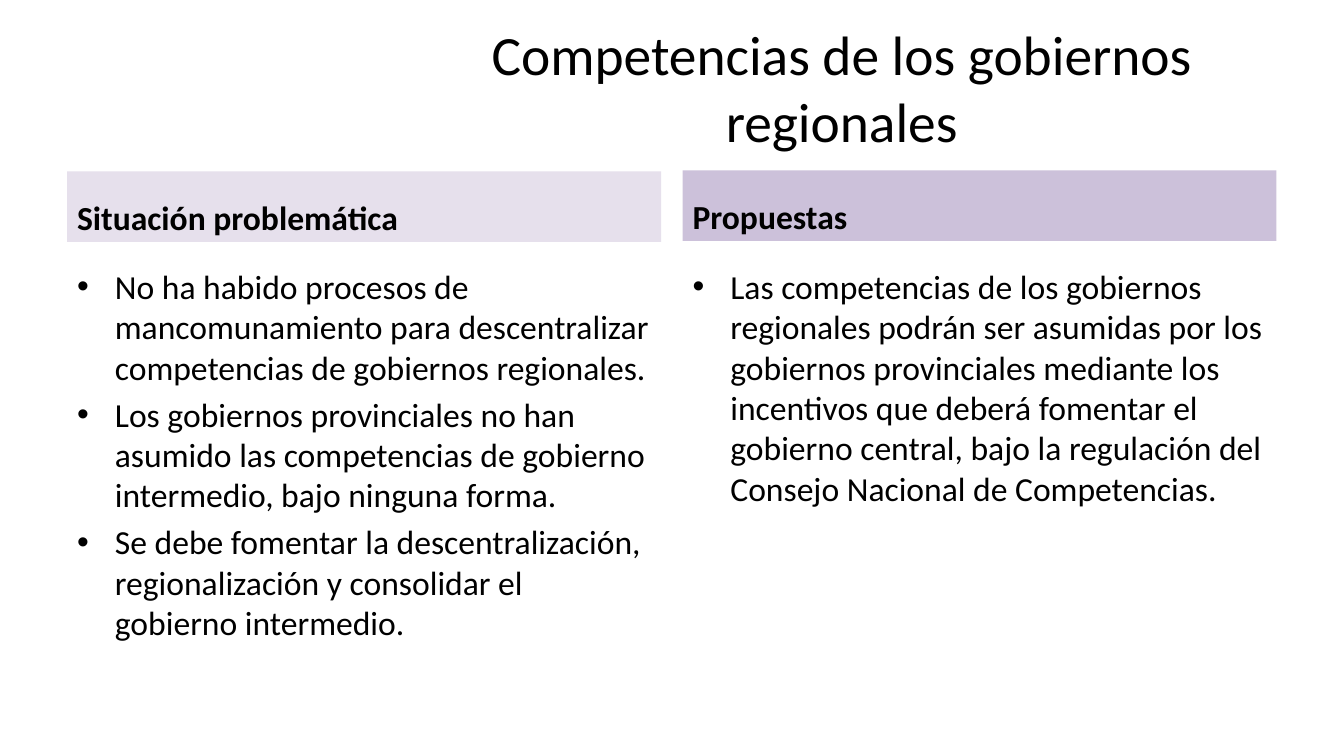
from lxml import etree
from pptx import Presentation
from pptx.dml.color import RGBColor
from pptx.enum.shapes import MSO_SHAPE
from pptx.enum.text import MSO_ANCHOR, MSO_AUTO_SIZE, PP_ALIGN
from pptx.oxml.ns import qn
from pptx.util import Pt

RECTANGLE = MSO_SHAPE.RECTANGLE
TOP, MIDDLE, BOTTOM = MSO_ANCHOR.TOP, MSO_ANCHOR.MIDDLE, MSO_ANCHOR.BOTTOM
NO_AUTOFIT = MSO_AUTO_SIZE.NONE
LEFT, CENTER = PP_ALIGN.LEFT, PP_ALIGN.CENTER

COLORS = {"text": "000000", "problem": "E6E0EC", "proposal": "CCC1DA"}
FONT = "Calibri"
BULLET_INDENT = Pt(27)
COLUMN_WIDTH = Pt(424.2)


def write_text(shape, paragraphs, size=24, bold=False, align=LEFT, anchor=TOP, bullets=False):
    frame = shape.text_frame
    frame.word_wrap = True
    frame.auto_size = NO_AUTOFIT
    frame.vertical_anchor = anchor
    for index, text in enumerate(paragraphs):
        paragraph = frame.add_paragraph() if index else frame.paragraphs[0]
        paragraph.text = text
        paragraph.alignment = align
        paragraph.space_before = Pt(4.8 if index else 0)
        if bullets:
            properties = paragraph._p.get_or_add_pPr()
            properties.set("marL", str(BULLET_INDENT))
            properties.set("indent", str(-BULLET_INDENT))
            etree.SubElement(properties, qn("a:buFont")).set("typeface", "Arial")
            etree.SubElement(properties, qn("a:buChar")).set("char", "•")
        font = paragraph.font
        font.name, font.size, font.bold = FONT, Pt(size), bold
        font.color.rgb = RGBColor.from_string(COLORS["text"])


presentation = Presentation()
presentation.slide_width, presentation.slide_height = Pt(960), Pt(540)
slide = presentation.slides.add_slide(presentation.slide_layouts[5])

title = slide.shapes.title
title.left, title.top, title.width, title.height = Pt(291), Pt(17), Pt(620.5), Pt(90)
write_text(title, ["Competencias de los gobiernos regionales"],
           size=39.6, align=CENTER, anchor=MIDDLE)

columns = [
    (48, 122.4, "problem", "Situación problemática", [
        "No ha habido procesos de mancomunamiento para descentralizar competencias de gobiernos regionales.",
        "Los gobiernos provinciales no han asumido las competencias de gobierno intermedio, bajo ninguna forma.",
        "Se debe fomentar la descentralización, regionalización y consolidar el gobierno intermedio.",
    ]),
    (487.6, 121.7, "proposal", "Propuestas", [
        "Las competencias de los gobiernos regionales podrán ser asumidas por los gobiernos provinciales "
        "mediante los incentivos que deberá fomentar el gobierno central, bajo la regulación del "
        "Consejo Nacional de Competencias.",
    ]),
]
for left, header_top, color, heading, points in columns:
    header = slide.shapes.add_shape(RECTANGLE, Pt(left), Pt(header_top), COLUMN_WIDTH, Pt(50.4))
    header.shadow.inherit = False
    header.fill.solid()
    header.fill.fore_color.rgb = RGBColor.from_string(COLORS[color])
    header.line.fill.background()
    write_text(header, [heading], bold=True, anchor=BOTTOM)

    body = slide.shapes.add_textbox(Pt(left), Pt(186.5), COLUMN_WIDTH, Pt(296))
    write_text(body, points, bullets=True)

presentation.save("out.pptx")
